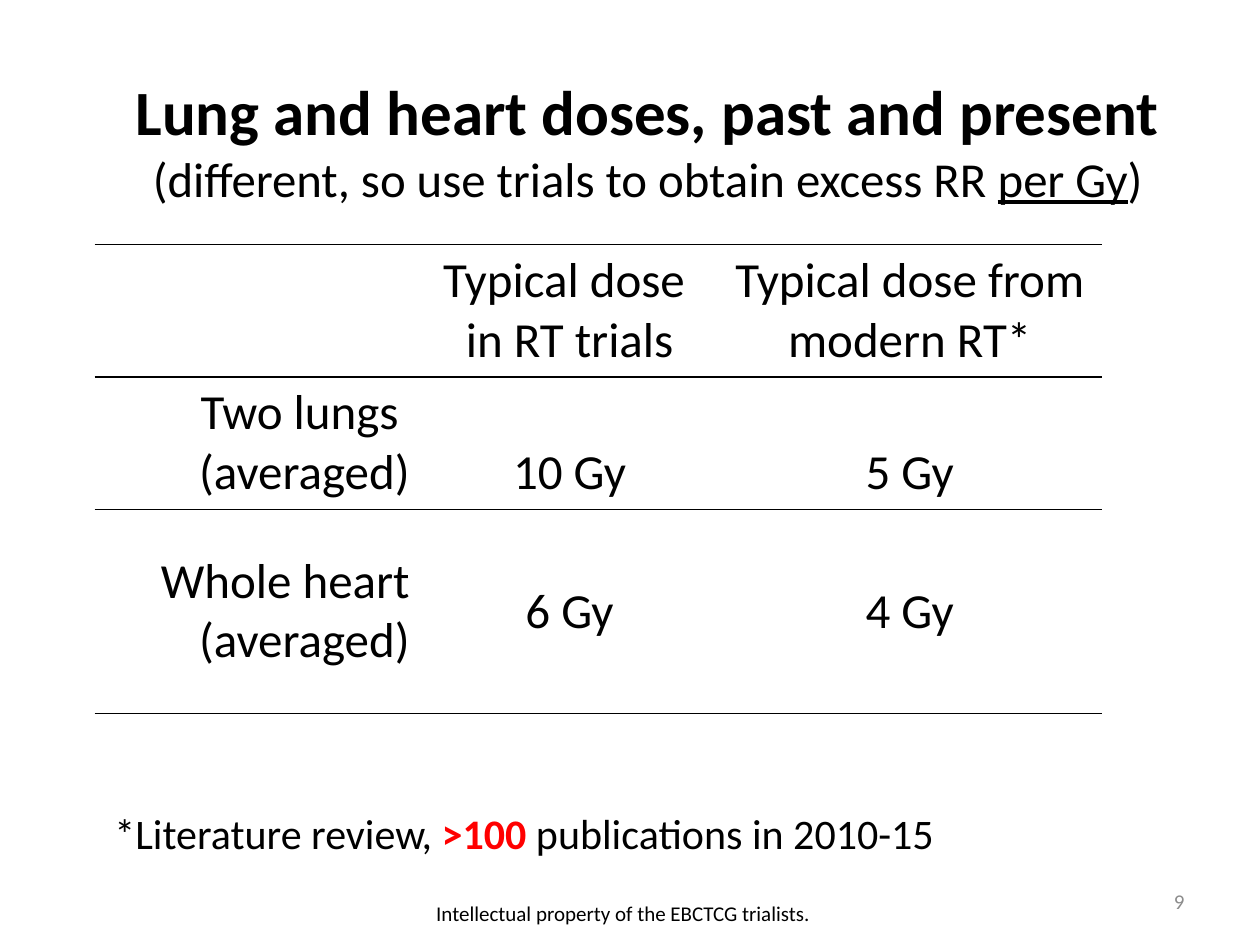
from lxml import etree
from pptx import Presentation
from pptx.dml.color import RGBColor
from pptx.enum.text import MSO_ANCHOR, MSO_AUTO_SIZE, PP_ALIGN
from pptx.oxml.ns import qn
from pptx.util import Inches, Pt

LEFT, CENTER, RIGHT = PP_ALIGN.LEFT, PP_ALIGN.CENTER, PP_ALIGN.RIGHT
TOP, MIDDLE, BOTTOM = MSO_ANCHOR.TOP, MSO_ANCHOR.MIDDLE, MSO_ANCHOR.BOTTOM
NO_FIT, GROW = MSO_AUTO_SIZE.NONE, MSO_AUTO_SIZE.SHAPE_TO_FIT_TEXT
TITLE_ONLY_LAYOUT = 5

BLACK, RED, GREY = "000000", "FF0000", "8C8C8C"


def color(hex_value):
    return RGBColor.from_string(hex_value)


class SlideBuilder:
    font = "Calibri"
    rule_width = Pt(1)

    def __init__(self, presentation):
        layout = presentation.slide_layouts[TITLE_ONLY_LAYOUT]
        self.slide = presentation.slides.add_slide(layout)

    def run(self, paragraph, text, size, ink=BLACK, bold=False, underline=False):
        run = paragraph.add_run()
        run.text = text
        font = run.font
        font.name, font.size = self.font, Pt(size)
        font.bold, font.underline = bold, underline
        font.color.rgb = color(ink)

    def title(self, box, heading, subtitle_runs):
        title = self.slide.shapes.title
        title.left, title.top, title.width, title.height = map(Inches, box)
        frame = title.text_frame
        frame.word_wrap, frame.auto_size = True, NO_FIT
        frame.vertical_anchor = MIDDLE
        paragraph = frame.paragraphs[0]
        paragraph.alignment = CENTER
        self.run(paragraph, heading, 36, bold=True)
        paragraph.add_line_break()
        for text, underline in subtitle_runs:
            self.run(paragraph, text, 27.9, underline=underline)

    def text(self, box, runs, size, align=LEFT, anchor=MIDDLE, fit=NO_FIT):
        """Add a one-paragraph text box; runs are (text, colour, bold)."""
        frame = self.slide.shapes.add_textbox(*map(Inches, box)).text_frame
        frame.word_wrap, frame.auto_size = True, fit
        frame.vertical_anchor = anchor
        paragraph = frame.paragraphs[0]
        paragraph.alignment = align
        for text, ink, bold in runs:
            self.run(paragraph, text, size, ink, bold)

    def rule_cell(self, cell):
        """Draw rules above and below the cell, and none at its sides."""
        properties = cell._tc.get_or_add_tcPr()
        for index, side in enumerate(("lnL", "lnR", "lnT", "lnB")):
            line = etree.Element(qn(f"a:{side}"), w=str(self.rule_width))
            if side in ("lnT", "lnB"):
                fill = etree.SubElement(line, qn("a:solidFill"))
                etree.SubElement(fill, qn("a:srgbClr"), val=BLACK)
            else:
                etree.SubElement(line, qn("a:noFill"))
            properties.insert(index, line)

    def table(self, left, top, widths, heights, rows, anchors, size):
        """Add a ruled table; each cell is a list of paragraphs."""
        table = self.slide.shapes.add_table(
            len(rows), len(widths), Inches(left), Inches(top),
            Inches(sum(widths)), Inches(sum(heights))).table
        table.first_row = table.horz_banding = False
        for column, width in zip(table.columns, widths):
            column.width = Inches(width)
        for r, (row, height) in enumerate(zip(rows, heights)):
            table.rows[r].height = Inches(height)
            for c, lines in enumerate(row):
                cell = table.cell(r, c)
                cell.fill.background()
                self.rule_cell(cell)
                is_row_label = c == 0
                cell.vertical_anchor = MIDDLE if is_row_label else anchors[r]
                frame = cell.text_frame
                for i, line in enumerate(lines):
                    paragraph = frame.add_paragraph() if i else frame.paragraphs[0]
                    paragraph.alignment = RIGHT if is_row_label else CENTER
                    self.run(paragraph, line, size)


def main():
    presentation = Presentation()
    presentation.slide_width, presentation.slide_height = Inches(10), Inches(7.5)
    builder = SlideBuilder(presentation)

    builder.title((0.28, 0.52, 9.72, 1.18),
                  "Lung and heart doses, past and present",
                  [("(different, so use trials to obtain excess RR ", False),
                   ("per Gy", True), (")", False)])

    doses = [
        [[], ["Typical dose ", "in RT trials"], ["Typical dose from modern RT*"]],
        [["Two lungs ", "(averaged)"], ["10 Gy"], ["5 Gy"]],
        [["Whole heart (averaged)"], ["6 Gy"], ["4 Gy"]],
    ]
    builder.table(0.75, 1.94, [2.6, 2.34, 3.06], [1.05, 1.05, 1.62],
                  doses, [TOP, BOTTOM, MIDDLE], 28)

    builder.text((7.17, 6.95, 2.33, 0.4), [("9", GREY, False)], 12, RIGHT)
    builder.text((0.81, 6.36, 8.19, 0.5),
                 [("*Literature review, ", BLACK, False), (">100 ", RED, True),
                  ("publications in 2010-15", BLACK, False)],
                 24, anchor=TOP, fit=GROW)
    builder.text((0.28, 7.05, 9.37, 0.4),
                 [("Intellectual property of the EBCTCG trialists. ", BLACK, False)],
                 12, CENTER)

    presentation.save("out.pptx")


if __name__ == "__main__":
    main()
